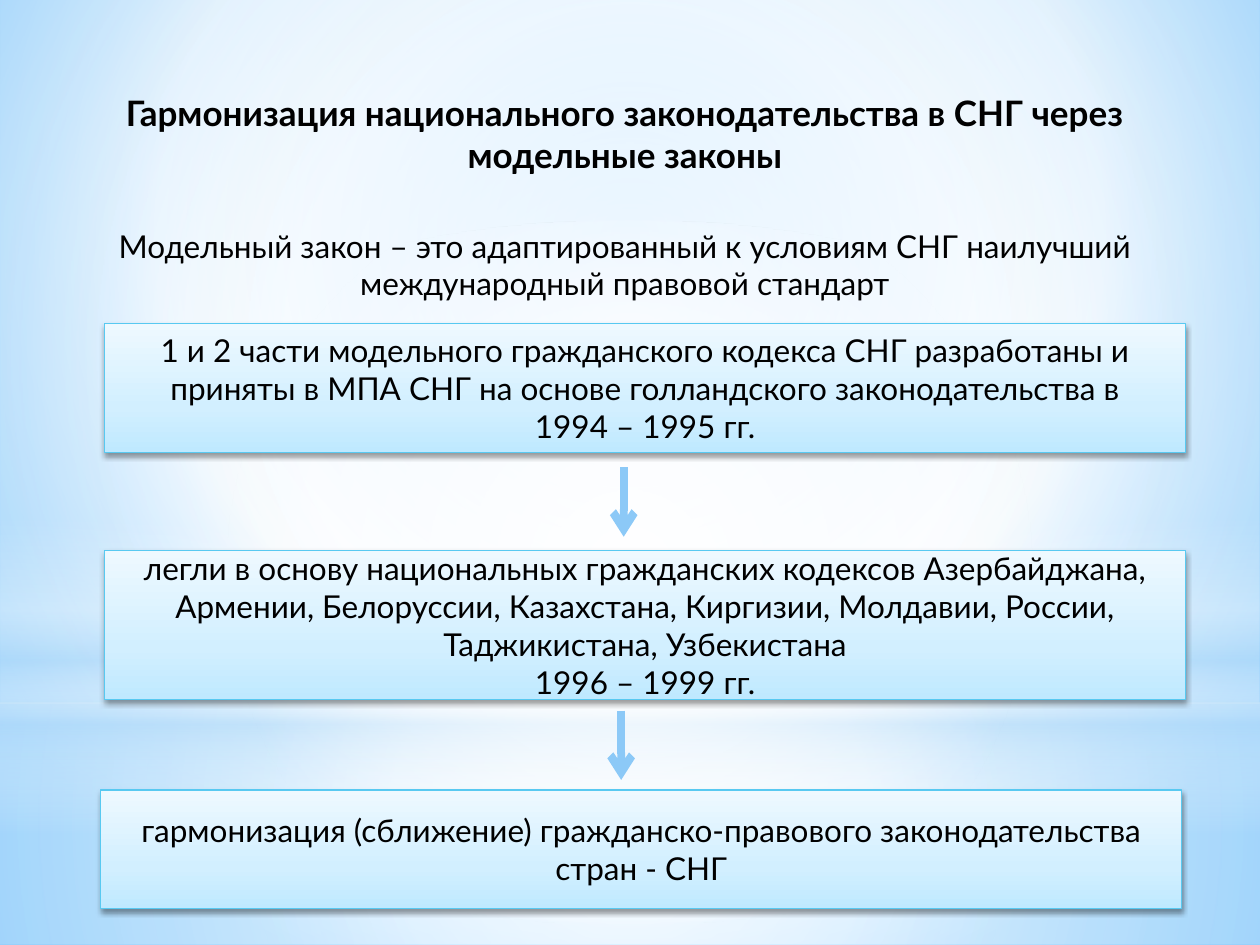
from lxml import etree
from pptx import Presentation
from pptx.dml.color import RGBColor
from pptx.enum.shapes import MSO_CONNECTOR, MSO_SHAPE
from pptx.enum.text import MSO_ANCHOR, PP_ALIGN
from pptx.oxml.ns import qn
from pptx.util import Inches, Pt

RECTANGLE, OVAL = MSO_SHAPE.RECTANGLE, MSO_SHAPE.OVAL
STRAIGHT = MSO_CONNECTOR.STRAIGHT
CENTER, MIDDLE = PP_ALIGN.CENTER, MSO_ANCHOR.MIDDLE
MIDPOINT = (50, 50, 50, 50)


def paint_gradient(properties, stops, angle=None, focus=MIDPOINT):
    gradient = etree.Element(qn("a:gradFill"), rotWithShape="1")
    stop_list = etree.SubElement(gradient, qn("a:gsLst"))
    for position, colour, opacity in stops:
        stop = etree.SubElement(stop_list, qn("a:gs"), pos=str(position * 1000))
        tint = etree.SubElement(stop, qn("a:srgbClr"), val=colour)
        if opacity < 100:
            etree.SubElement(tint, qn("a:alpha"), val=str(opacity * 1000))
    if angle is None:
        circle = etree.SubElement(gradient, qn("a:path"), path="circle")
        sides = {side: str(value * 1000) for side, value in zip("ltrb", focus)}
        etree.SubElement(circle, qn("a:fillToRect"), **sides)
    else:
        etree.SubElement(gradient, qn("a:lin"), ang=str(angle * 60000), scaled="0")
    properties.replace(properties.find(qn("a:noFill")), gradient)


def write_text(paragraph, text, size=18, bold=False, colour="000000", before=0):
    paragraph.text = text
    paragraph.alignment = CENTER
    paragraph.space_before = Pt(before)
    for run in paragraph.runs:
        run.font.name = "Lato"
        run.font.size = Pt(size)
        run.font.bold = bold
        run.font.color.rgb = RGBColor.from_string(colour)


prs = Presentation()
prs.slide_width, prs.slide_height = Inches(10), Inches(7.5)
slide = prs.slides.add_slide(prs.slide_layouts[6])

slide.background.fill.background()
paint_gradient(
    slide.element.find(".//" + qn("p:bgPr")),
    [(0, "9ED5FF", 100), (60, "FFFFFF", 100), (100, "5BB9FF", 100)],
    focus=(20, 10, 20, 60),
)

glows = [
    (RECTANGLE, 5.58, 1.92, None,
     [(0, "FFFFFF", 91), (37, "FFFFFF", 76), (100, "B4DCFA", 79)]),
    (RECTANGLE, 0, 5.58, None,
     [(0, "FFFFFF", 89), (48, "FFFFFF", 62), (100, "B4DCFA", 79)]),
    (RECTANGLE, 4.12, 2.5, 90,
     [(0, "FFFFFF", 0), (29, "FFFFFF", 30), (45, "B4DCFA", 40),
      (55, "FFFFFF", 26), (65, "B4DCFA", 60), (100, "FFFFFF", 0)]),
    (OVAL, 1.75, 5.58, None, [(0, "FFFFFF", 100), (56, "FFFFFF", 0)]),
]
for outline, top, height, angle, stops in glows:
    glow = slide.shapes.add_shape(outline, 0, Inches(top), Inches(10), Inches(height))
    glow.shadow.inherit = False
    glow.line.fill.background()
    glow.fill.background()
    paint_gradient(glow.element.spPr, stops, angle)

heading = slide.shapes.add_textbox(Inches(0.43), Inches(0.68), Inches(9.06), Inches(2.09))
heading.text_frame.word_wrap = True
write_text(
    heading.text_frame.paragraphs[0],
    "Гармонизация национального законодательства в СНГ через модельные законы",
    size=20, bold=True,
)
write_text(
    heading.text_frame.add_paragraph(),
    "Модельный закон – это адаптированный к условиям СНГ наилучший международный правовой стандарт",
    before=29,
)

stages = [
    (0.83, 2.57, 1.02, [
        "1 и 2 части модельного гражданского кодекса СНГ разработаны и приняты "
        "в МПА СНГ на основе голландского законодательства в\v1994 – 1995 гг."]),
    (0.83, 4.37, 1.18, [
        "легли в основу национальных гражданских кодексов Азербайджана, Армении, "
        "Белоруссии, Казахстана, Киргизии, Молдавии, России, Таджикистана, Узбекистана",
        "1996 – 1999 гг."]),
    (0.8, 6.27, 0.94, [
        "гармонизация (сближение) гражданско-правового законодательства стран - СНГ"]),
]
for left, top, height, lines in stages:
    stage = slide.shapes.add_shape(
        RECTANGLE, Inches(left), Inches(top), Inches(8.58), Inches(height))
    stage.fill.background()
    paint_gradient(
        stage.element.spPr,
        [(0, "BFE9FF", 100), (35, "D2EFFF", 100), (100, "EEF9FF", 100)],
        angle=270,
    )
    stage.line.color.rgb = RGBColor.from_string("58C9F1")
    stage.line.width = Pt(0.75)
    stage.shadow.inherit = False
    shadow = etree.SubElement(
        stage.element.spPr.find(qn("a:effectLst")), qn("a:outerShdw"),
        blurRad=str(Pt(3.1)), dist=str(Pt(1.6)), dir="5400000", rotWithShape="0")
    shade = etree.SubElement(shadow, qn("a:srgbClr"), val="000000")
    etree.SubElement(shade, qn("a:alpha"), val="38000")
    frame = stage.text_frame
    frame.word_wrap = True
    frame.vertical_anchor = MIDDLE
    for index, line in enumerate(lines):
        write_text(frame.add_paragraph() if index else frame.paragraphs[0], line)

for x, top in [(4.95, 3.71), (4.93, 5.64)]:
    arrow = slide.shapes.add_connector(
        STRAIGHT, Inches(x), Inches(top), Inches(x), Inches(top + 0.55))
    arrow.line.color.rgb = RGBColor.from_string("8CC9F7")
    arrow.line.width = Pt(4.5)
    etree.SubElement(arrow.line._get_or_add_ln(), qn("a:tailEnd"), type="arrow")
    etree.SubElement(arrow._element.spPr, qn("a:effectLst"))

prs.save("out.pptx")
